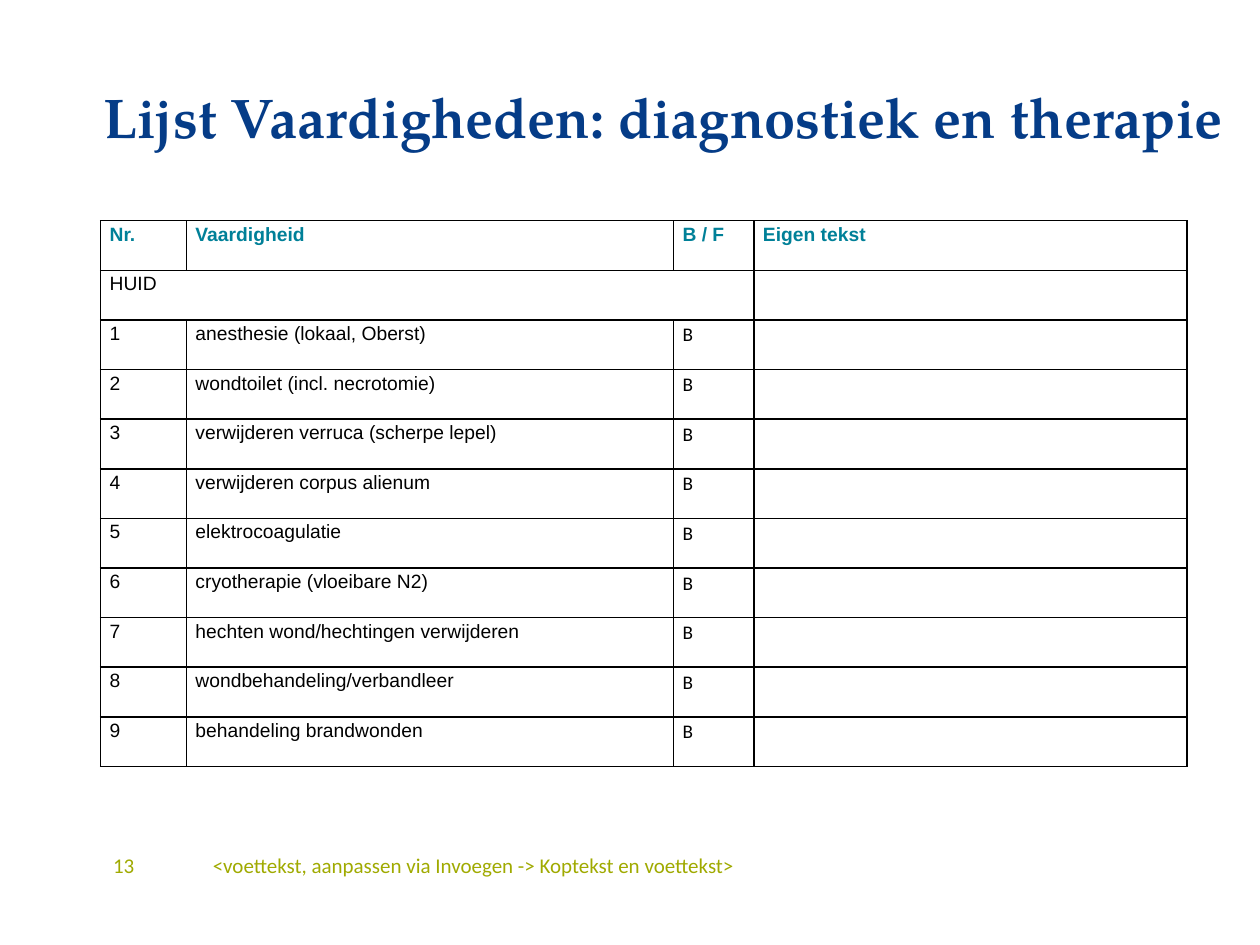
import lxml.etree
import pptx
import pptx.dml.color
import pptx.enum.text
import pptx.oxml.ns
import pptx.util

Cm = pptx.util.Cm
Pt = pptx.util.Pt

TITLE = "Lijst Vaardigheden: diagnostiek en therapie"
HEADINGS = ["Nr.", "Vaardigheid", "B / F", "Eigen tekst"]
SECTION = "HUID"
SKILLS = [
    "anesthesie (lokaal, Oberst)",
    "wondtoilet (incl. necrotomie)",
    "verwijderen verruca (scherpe lepel)",
    "verwijderen corpus alienum",
    "elektrocoagulatie",
    "cryotherapie (vloeibare N2)",
    "hechten wond/hechtingen verwijderen",
    "wondbehandeling/verbandleer",
    "behandeling brandwonden",
]
LEVEL = "B"
FOOTERS = [
    ("<voettekst, aanpassen via Invoegen -> Koptekst en voettekst>", 4.04, 12.7),
    ("13", 2.03, 1.5),
]

COLORS = {"title": "053C87", "footer": "A0AA00", "heading": "008098", "text": "000000", "border": "000000"}
FORMATS = {
    "title": {"name": "TeX Gyre Pagella", "size": Pt(32), "bold": True},
    "footer": {"name": "Calibri", "size": Pt(12), "bold": False},
    "heading": {"name": "Arial", "size": Pt(11), "bold": True},
    "text": {"name": "Arial", "size": Pt(11), "bold": False},
    "level": {"name": "Calibri", "size": Pt(11), "bold": False},
}
PARAGRAPH_FORMAT = {"line_spacing": 1.15, "space_after": Pt(10)}
CELL_MARGINS = {"margin_left": Cm(0.18), "margin_right": Cm(0.18), "margin_top": 0, "margin_bottom": 0}
FRAME_FORMAT = {
    "word_wrap": True,
    "auto_size": pptx.enum.text.MSO_AUTO_SIZE.NONE,
    "vertical_anchor": pptx.enum.text.MSO_ANCHOR.MIDDLE,
}
COLUMN_WIDTHS = [1.73, 9.82, 1.62, 8.73]
ROW_HEIGHT = 1.0


def set_attributes(target, values):
    for name, value in values.items():
        setattr(target, name, value)


def write_text(text_frame, text, style):
    paragraph = text_frame.paragraphs[0]
    paragraph.alignment = pptx.enum.text.PP_ALIGN.LEFT
    run = paragraph.add_run()
    run.text = text
    set_attributes(run.font, FORMATS[style])
    color = COLORS.get(style, COLORS["text"])
    run.font.color.rgb = pptx.dml.color.RGBColor.from_string(color)
    return paragraph


def add_borders(cell):
    properties = cell._tc.get_or_add_tcPr()
    qn = pptx.oxml.ns.qn
    for side in ("lnL", "lnR", "lnT", "lnB"):
        line = lxml.etree.SubElement(properties, qn(f"a:{side}"), w=str(Pt(1)))
        fill = lxml.etree.SubElement(line, qn("a:solidFill"))
        lxml.etree.SubElement(fill, qn("a:srgbClr"), val=COLORS["border"])


def add_title(slide):
    title = slide.shapes.title
    set_attributes(title, {"left": Cm(1.83), "top": Cm(0.76), "width": Cm(23.24), "height": Cm(3.18)})
    set_attributes(title.text_frame, FRAME_FORMAT)
    write_text(title.text_frame, TITLE, "title")


def add_footers(slide):
    for text, left, width in FOOTERS:
        box = slide.shapes.add_textbox(Cm(left), Cm(17.02), Cm(width), Cm(0.86))
        set_attributes(box.text_frame, FRAME_FORMAT)
        write_text(box.text_frame, text, "footer")


def add_skill_table(slide):
    rows = [HEADINGS, [SECTION, "", "", ""]]
    rows += [[str(number), skill, LEVEL, ""] for number, skill in enumerate(SKILLS, 1)]
    frame = slide.shapes.add_table(
        len(rows), len(HEADINGS), Cm(2.03), Cm(4.45), Cm(sum(COLUMN_WIDTHS)), Cm(ROW_HEIGHT * len(rows))
    )
    table = frame.table
    set_attributes(table, {"first_row": False, "horz_banding": False})
    for column, width in zip(table.columns, COLUMN_WIDTHS):
        column.width = Cm(width)
    for row_index, row in enumerate(rows):
        table.rows[row_index].height = Cm(ROW_HEIGHT)
        for column_index, text in enumerate(row):
            cell = table.cell(row_index, column_index)
            set_attributes(cell, CELL_MARGINS)
            add_borders(cell)
            cell.fill.background()
            if text:
                style = "heading" if row_index == 0 else "level" if column_index == 2 else "text"
                set_attributes(write_text(cell.text_frame, text, style), PARAGRAPH_FORMAT)
    table.cell(1, 0).merge(table.cell(1, 2))


def main():
    presentation = pptx.Presentation()
    set_attributes(presentation, {"slide_width": Cm(25.4), "slide_height": Cm(19.05)})
    slide = presentation.slides.add_slide(presentation.slide_layouts[5])
    add_title(slide)
    add_footers(slide)
    add_skill_table(slide)
    presentation.save("out.pptx")


if __name__ == "__main__":
    main()
